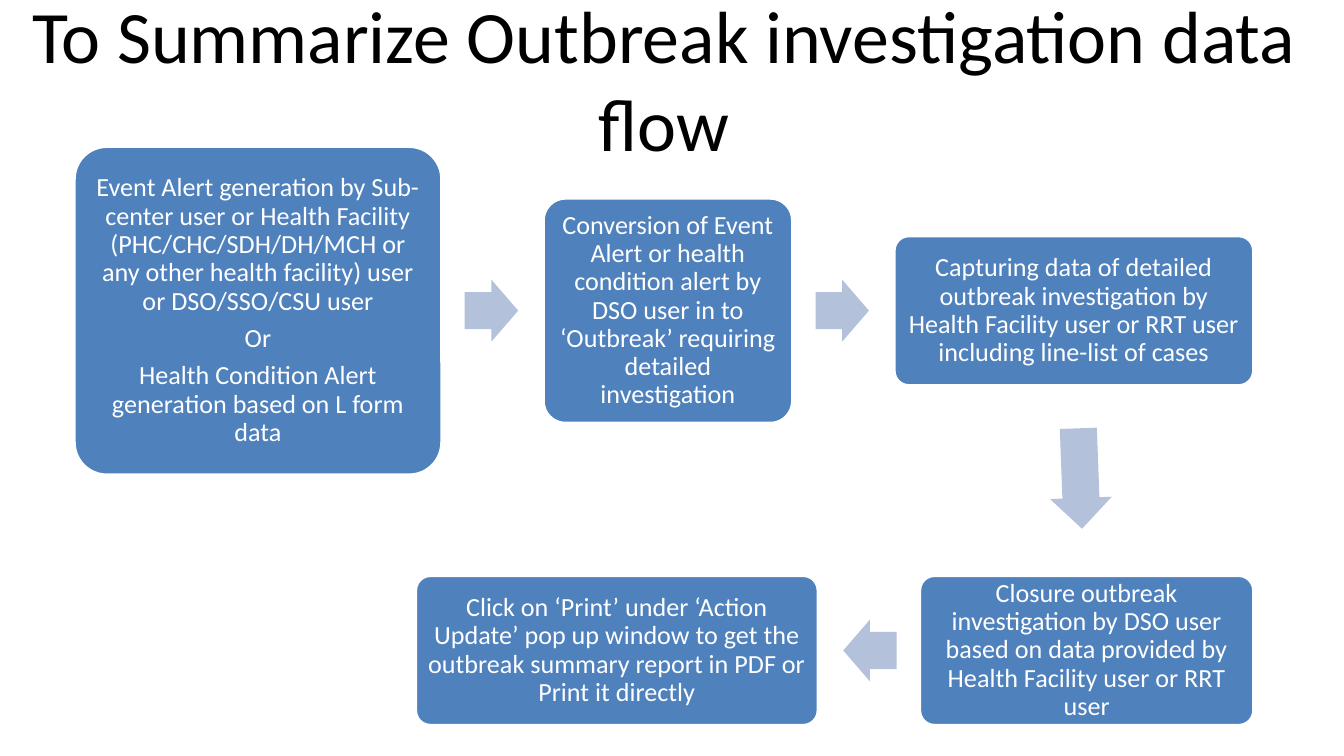
from dataclasses import dataclass
from math import atan2, cos, degrees, hypot, sin

from pptx import Presentation
from pptx.dml.color import RGBColor
from pptx.enum.shapes import MSO_SHAPE
from pptx.enum.text import MSO_ANCHOR, MSO_AUTO_SIZE, PP_ALIGN
from pptx.shapes.autoshape import Shape
from pptx.slide import Slide
from pptx.text.text import TextFrame
from pptx.util import Inches, Pt

ROUNDED = MSO_SHAPE.ROUNDED_RECTANGLE
ARROW = MSO_SHAPE.RIGHT_ARROW
MIDDLE = MSO_ANCHOR.MIDDLE
NO_AUTOFIT = MSO_AUTO_SIZE.NONE
CENTER = PP_ALIGN.CENTER

# Widescreen slide; grid of 100 square columns across it
SLIDE_WIDTH = Inches(10)
SLIDE_HEIGHT = SLIDE_WIDTH * 9 // 16
CELL = SLIDE_WIDTH / 100
TOP_ROW, BOTTOM_ROW = 23.12, 48.4  # centre lines of the two rows of steps
GAP = 7.5  # between neighbouring steps
ARROW_HEIGHT = 4.6
ARROW_SHARE = 0.53  # arrow length as a share of the space between steps
ARROW_SETBACK = 0.02  # shift towards the previous step, share of the length

FONT = "Calibri"
STEP_FILL, ARROW_FILL, WHITE, BLACK = "4F81BD", "B3C1DB", "FFFFFF", "000000"

TITLE = "To Summarize Outbreak investigation data flow"
TITLE_FORMAT = {"alignment": CENTER}
STEP_FORMAT = {"alignment": CENTER, "line_spacing": 0.9, "space_after": Pt(4.9)}
FRAME_FORMAT = {"word_wrap": True, "auto_size": NO_AUTOFIT,
                "vertical_anchor": MIDDLE}
STEP_INSETS = {f"margin_{side}": Inches(0.06)
               for side in ("left", "top", "right", "bottom")}


@dataclass
class Step:
    left: float
    middle: float
    width: float
    height: float
    paragraphs: tuple[str, ...]

    @property
    def right(self) -> float:
        return self.left + self.width

    @property
    def center(self) -> float:
        return self.left + self.width / 2

    @property
    def top(self) -> float:
        return self.middle - self.height / 2

    @property
    def bottom(self) -> float:
        return self.middle + self.height / 2


def color(hex_value: str) -> RGBColor:
    return RGBColor.from_string(hex_value)


def cells(count: float) -> int:
    return round(count * CELL)


def apply_format(target: object, values: dict) -> None:
    for name, value in values.items():
        setattr(target, name, value)


def write(frame: TextFrame, paragraphs: tuple[str, ...], size: float,
          text_color: str, paragraph_format: dict) -> None:
    apply_format(frame, FRAME_FORMAT)
    frame.text = "\n".join(paragraphs)
    for paragraph in frame.paragraphs:
        apply_format(paragraph, paragraph_format)
        for run in paragraph.runs:
            apply_format(run.font, {"name": FONT, "size": Pt(size)})
            run.font.color.rgb = color(text_color)


def add_filled(slide: Slide, preset: MSO_SHAPE, left: float, top: float,
               width: float, height: float, fill: str) -> Shape:
    shape = slide.shapes.add_shape(
        preset, cells(left), cells(top), cells(width), cells(height))
    shape.shadow.inherit = False
    shape.fill.solid()
    shape.fill.fore_color.rgb = color(fill)
    return shape


def draw_step(slide: Slide, step: Step) -> None:
    box = add_filled(slide, ROUNDED, step.left, step.top,
                     step.width, step.height, STEP_FILL)
    box.adjustments[0] = 0.1
    box.line.color.rgb = color(WHITE)
    box.line.width = Pt(2)
    apply_format(box.text_frame, STEP_INSETS)
    write(box.text_frame, step.paragraphs, 14, WHITE, STEP_FORMAT)


def draw_arrow(slide: Slide, source: Step, target: Step) -> None:
    """Place an arrow between the facing sides, aimed at the next step."""
    if source.middle != target.middle:
        start = (source.center, source.bottom)
        end = (target.center, target.top)
    elif source.left < target.left:
        start, end = (source.right, source.middle), (target.left, target.middle)
    else:
        start, end = (source.left, source.middle), (target.right, target.middle)
    angle = atan2(target.middle - source.middle, target.center - source.center)
    length = ARROW_SHARE * hypot(end[0] - start[0], end[1] - start[1])
    setback = ARROW_SETBACK * length
    x = (start[0] + end[0]) / 2 - setback * cos(angle)
    y = (start[1] + end[1]) / 2 - setback * sin(angle)
    arrow = add_filled(slide, ARROW, x - length / 2, y - ARROW_HEIGHT / 2,
                       length, ARROW_HEIGHT, ARROW_FILL)
    arrow.adjustments[0], arrow.adjustments[1] = 0.6, 0.5
    arrow.line.fill.background()
    arrow.rotation = degrees(angle)


def plan_steps() -> list[Step]:
    alert = Step(5.5, TOP_ROW, 27.4, 24.5, (
        "Event Alert generation by Sub-center user or Health Facility "
        "(PHC/CHC/SDH/DH/MCH or any other health facility) user "
        "or DSO/SSO/CSU user",
        "Or",
        "Health Condition Alert generation based on L form data"))
    conversion = Step(alert.right + GAP, TOP_ROW, 18.6, 16.8, (
        "Conversion of Event Alert or health condition alert by DSO user "
        "in to ‘Outbreak’ requiring detailed investigation",))
    capture = Step(conversion.right + GAP, TOP_ROW, 26.8, 11.2, (
        "Capturing data of detailed outbreak investigation by Health Facility "
        "user or RRT user including line-list of cases",))
    # The second row runs back from the right edge of the first
    closure_width, report_width = 24.9, 30
    closure = Step(capture.right - closure_width, BOTTOM_ROW, closure_width, 11.2, (
        "Closure outbreak investigation by DSO user based on data provided "
        "by Health Facility user or RRT user",))
    report = Step(closure.left - GAP - report_width, BOTTOM_ROW, report_width, 11.2, (
        "Click on ‘Print’ under ‘Action Update’ pop up window to get the "
        "outbreak summary report in PDF or Print it directly",))
    return [alert, conversion, capture, closure, report]


def main() -> None:
    presentation = Presentation()
    presentation.slide_width = SLIDE_WIDTH
    presentation.slide_height = SLIDE_HEIGHT
    slide = presentation.slides.add_slide(presentation.slide_layouts[5])

    # Title
    title = slide.shapes.title
    apply_format(title, {"left": cells(-1.2), "top": 0,
                         "width": cells(101.2), "height": cells(11.6)})
    write(title.text_frame, (TITLE,), 39.6, BLACK, TITLE_FORMAT)

    # Steps and the arrows between them
    steps = plan_steps()
    for step in steps:
        draw_step(slide, step)
    for source, target in zip(steps, steps[1:]):
        draw_arrow(slide, source, target)

    presentation.save("out.pptx")


if __name__ == "__main__":
    main()
